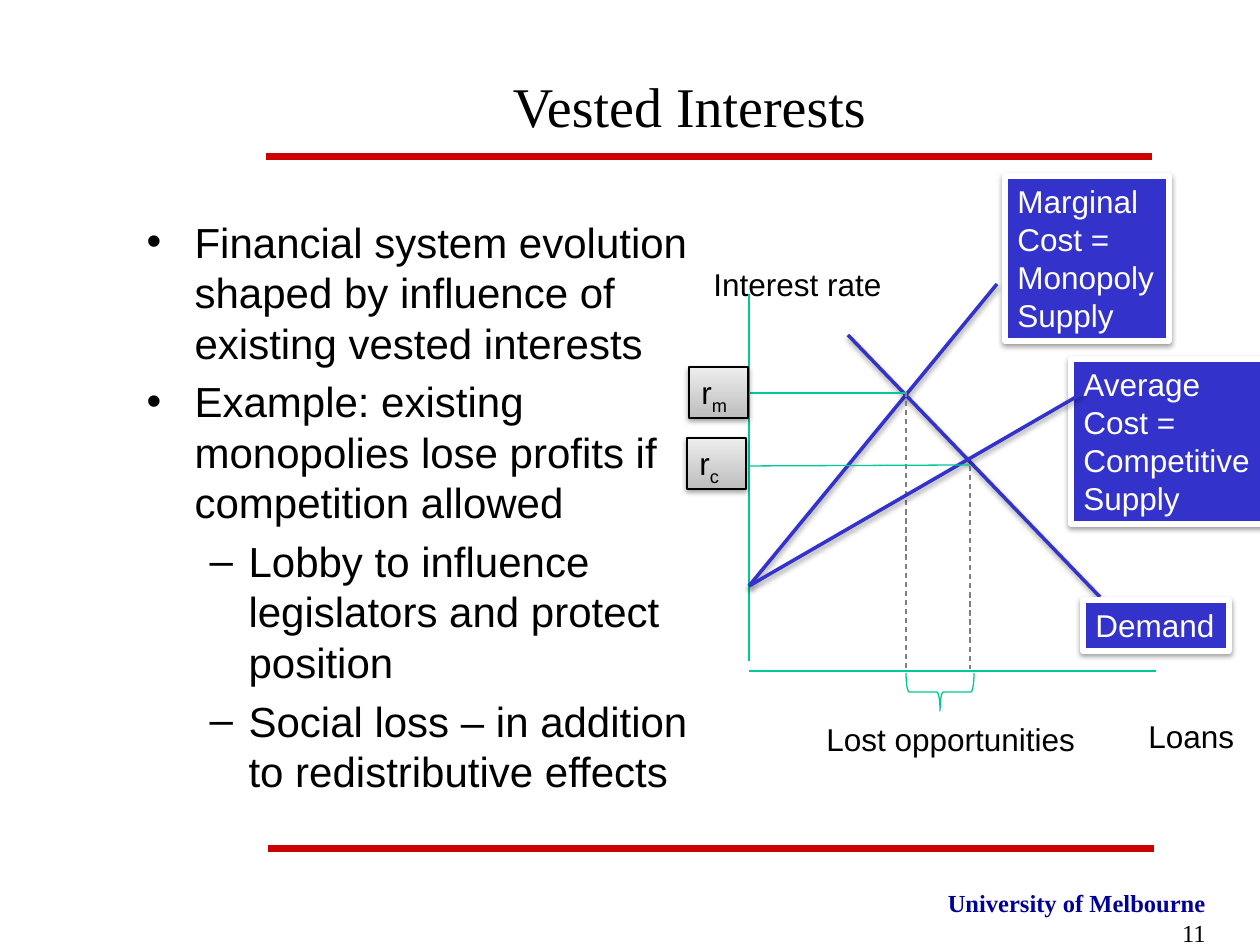
from lxml import etree
from pptx import Presentation
from pptx.dml.color import RGBColor
from pptx.enum.dml import MSO_LINE
from pptx.enum.shapes import MSO_CONNECTOR, MSO_SHAPE
from pptx.enum.text import MSO_ANCHOR, MSO_AUTO_SIZE, PP_ALIGN
from pptx.oxml.ns import qn
from pptx.util import Emu, Inches, Pt

STRAIGHT = MSO_CONNECTOR.STRAIGHT
DASH = MSO_LINE.DASH
RECT, BRACE = MSO_SHAPE.RECTANGLE, MSO_SHAPE.RIGHT_BRACE
TOP, MIDDLE = MSO_ANCHOR.TOP, MSO_ANCHOR.MIDDLE
NO_FIT = MSO_AUTO_SIZE.NONE
LEFT, CENTER, RIGHT = PP_ALIGN.LEFT, PP_ALIGN.CENTER, PP_ALIGN.RIGHT
SCALE = 914400 / 126
SANS, SERIF = "Arial", "Times New Roman"
COLORS = {
    "black": "000000", "white": "FFFFFF", "navy": "000099", "rule": "CC0000",
    "axis": "00C896", "curve": "3333CC", "guide": "808080",
    "dark": "BDBDBD", "light": "EEEEEE",
}


def px(n):
    return Emu(round(n * SCALE))


def rgb(name):
    return RGBColor.from_string(COLORS[name])


class SlideBuilder:
    """Draws styled elements on one slide, with lengths in px."""

    def __init__(self, slide):
        self.slide = slide
        self.shapes = slide.shapes

    def font(self, target, size, color="black", name=SANS, bold=False):
        f = target.font
        f.size, f.name, f.bold = Pt(size), name, bold
        f.color.rgb = rgb(color)

    def place(self, sp, x, y, w, h):
        sp.left, sp.top, sp.width, sp.height = px(x), px(y), px(w), px(h)

    def effects(self, sp, shadow):
        spPr = sp._element.spPr
        for old in spPr.findall(qn("a:effectLst")):
            spPr.remove(old)
        lst = etree.SubElement(spPr, qn("a:effectLst"))
        if shadow:
            outer = etree.SubElement(lst, qn("a:outerShdw"), blurRad="40000",
                                     dist="20000", dir="5400000", rotWithShape="0")
            color = etree.SubElement(outer, qn("a:srgbClr"), val=COLORS["black"])
            etree.SubElement(color, qn("a:alpha"), val="38000")

    def title(self, text, box):
        sp = self.shapes.title
        self.place(sp, *box)
        tf = sp.text_frame
        tf.text, tf.vertical_anchor, tf.auto_size = text, MIDDLE, NO_FIT
        p = tf.paragraphs[0]
        p.alignment = CENTER
        self.font(p, 32, name=SERIF)

    def bullets(self, items, box):
        sp = self.slide.placeholders[1]
        self.place(sp, *box)
        tf = sp.text_frame
        tf.text = "\n".join(text for _, text in items)
        tf.auto_size = NO_FIT
        for p, (level, _) in zip(tf.paragraphs, items):
            p.level = level
            margin, hang = ((48, 48), (102, 39))[level]
            pPr = p._p.get_or_add_pPr()
            pPr.set("marL", str(px(margin)))
            pPr.set("indent", str(px(-hang)))
            self.font(p, 24)
        tf.paragraphs[0].space_before = Pt(0)

    def line(self, x1, y1, x2, y2, color, width, dash=None, shadow=False):
        s = self.shapes.add_connector(STRAIGHT, px(x1), px(y1), px(x2), px(y2))
        s.line.color.rgb, s.line.width = rgb(color), Pt(width)
        if dash:
            s.line.dash_style = dash
        self.effects(s, shadow)

    def label(self, text, x, y, w, h):
        sp = self.shapes.add_textbox(px(x), px(y), px(w), px(h))
        sp.text_frame.text = text
        self.font(sp.text_frame.paragraphs[0], 18)

    def curve_box(self, text, x, y, w, h):
        sp = self.shapes.add_shape(RECT, px(x), px(y), px(w), px(h))
        sp.fill.solid()
        sp.fill.fore_color.rgb = rgb("curve")
        sp.line.color.rgb, sp.line.width = rgb("white"), Pt(3)
        self.effects(sp, True)
        tf = sp.text_frame
        tf.text, tf.word_wrap, tf.vertical_anchor = text, False, TOP
        for p in tf.paragraphs:
            p.alignment = LEFT
            self.font(p, 18, "white")

    def rate_box(self, subscript, x, y, w=59, h=51):
        sp = self.shapes.add_shape(RECT, px(x), px(y), px(w), px(h))
        sp.fill.gradient()
        sp.fill.gradient_angle = 90
        for stop, position, color in zip(sp.fill.gradient_stops, (0, 1), ("dark", "light")):
            stop.position, stop.color.rgb = position, rgb(color)
        sp.line.color.rgb, sp.line.width = rgb("black"), Pt(0.75)
        self.effects(sp, True)
        tf = sp.text_frame
        tf.vertical_anchor = TOP
        p = tf.paragraphs[0]
        p.alignment = LEFT
        self.font(p, 18)
        p.add_run().text = "r"
        r = p.add_run()
        r.text = subscript
        r.font._element.set("baseline", "-25000")

    def brace(self, x, y, w, h):
        sp = self.shapes.add_shape(BRACE, px(x), px(y), px(w), px(h))
        sp.rotation = 90
        sp.fill.background()
        sp.line.color.rgb, sp.line.width = rgb("axis"), Pt(0.75)
        sp.shadow.inherit = False

    def footer(self, name, number, x, y, w, h):
        sp = self.shapes.add_textbox(px(x), px(y), px(w), px(h))
        tf = sp.text_frame
        tf.word_wrap = True
        p = tf.paragraphs[0]
        p.alignment = RIGHT
        for text, color, bold in ((name + " ", "navy", True), (number, "black", False)):
            r = p.add_run()
            r.text = text
            self.font(r, 14, color, SERIF, bold)


def main():
    prs = Presentation()
    prs.slide_width, prs.slide_height = Inches(10), Inches(7.5)
    s = SlideBuilder(prs.slides.add_slide(prs.slide_layouts[1]))

    s.footer("University of Melbourne", "11", 912, 882, 306, 63)
    s.line(268, 849, 1154, 849, "rule", 4)
    s.line(266, 157, 1152, 157, "rule", 4)
    s.title("Vested Interests", (224, 53, 931, 105))
    s.bullets([
        (0, "Financial system evolution shaped by influence of existing vested interests"),
        (0, "Example: existing monopolies lose profits if competition allowed"),
        (1, "Lobby to influence legislators and protect position"),
        (1, "Social loss – in addition to redistributive effects"),
    ], (134, 210, 567, 630))

    s.line(749, 294, 749, 661, "axis", 0.75)
    s.line(749, 671, 1156, 671, "axis", 0.75)
    s.label("Interest rate", 701, 259, 195, 51)
    s.label("Loans", 1136, 711, 112, 51)

    s.line(749, 586, 997, 284, "curve", 2, shadow=True)
    s.curve_box("Average\nCost =\nCompetitive\nSupply", 1071, 359, 193, 165)
    s.line(1100, 597, 848, 335, "curve", 2, shadow=True)
    s.curve_box("Demand", 1083, 600, 146, 51)
    s.line(970, 466, 970, 669, "guide", 0.75, DASH)
    s.line(906, 392, 906, 670, "guide", 0.75, DASH)
    s.brace(921, 658, 38, 68)
    s.label("Lost opportunities", 814, 714, 276, 51)
    s.line(749, 586, 1083, 393, "curve", 2, shadow=True)
    s.curve_box("Marginal\nCost =\nMonopoly\nSupply", 1005, 176, 164, 165)

    s.line(906, 393, 749, 393, "axis", 0.75)
    s.line(970, 465, 749, 466, "axis", 0.75)
    s.rate_box("m", 689, 367)
    s.rate_box("c", 687, 438)
    prs.save("out.pptx")


if __name__ == "__main__":
    main()
